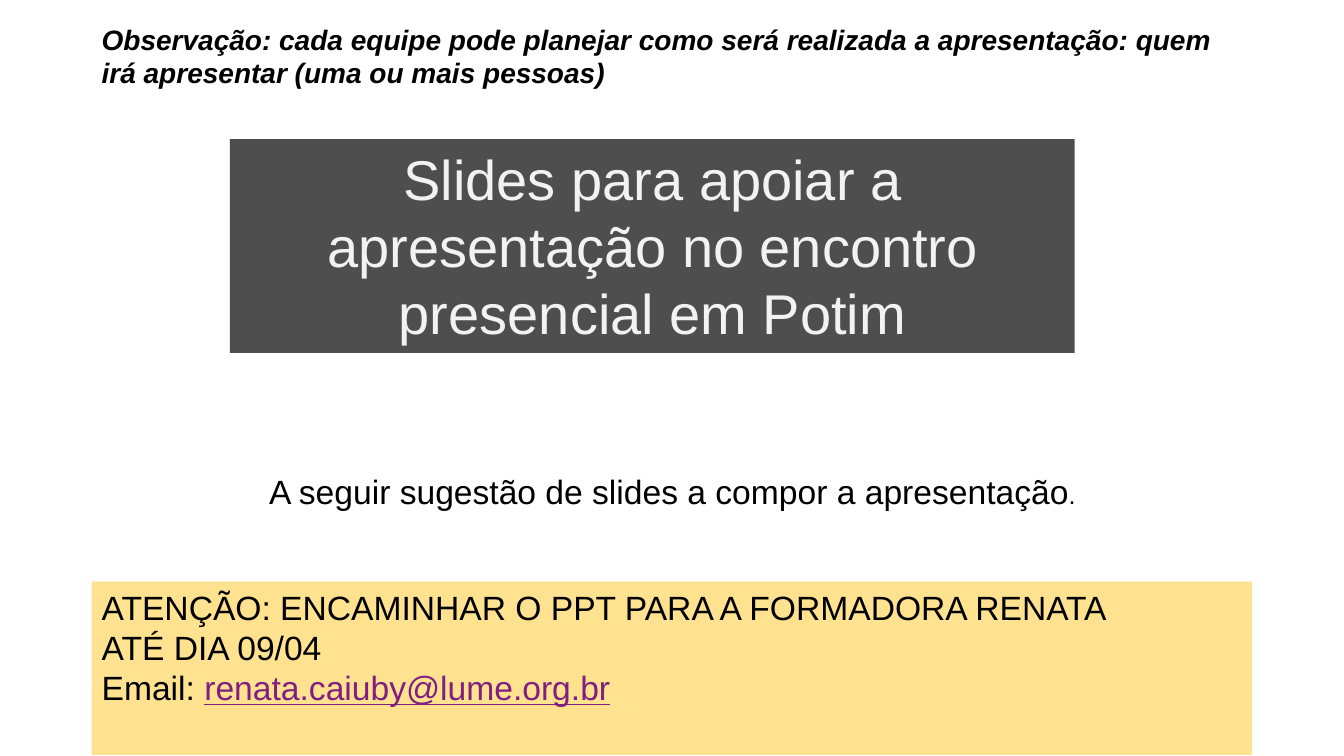
import pptx
import pptx.dml.color
import pptx.enum.shapes
import pptx.enum.text
import pptx.util

WIDTH, HEIGHT = 13.33, 7.5
ALIGN = pptx.enum.text.PP_ALIGN
BLACK = "000000"


def color(hex_value):
    """Turn a hex string into a colour."""
    return pptx.dml.color.RGBColor.from_string(hex_value)


def style(font, size, hex_value=BLACK):
    """Set the typeface, size and colour of a font."""
    font.name = "Arial"
    font.size = pptx.util.Pt(size)
    font.color.rgb = color(hex_value)


def add_area(slide, box, fill=None):
    """Add a text area, as a filled panel if a fill is given, and return its text frame."""
    left, top, width, height = (pptx.util.Inches(length) for length in box)
    if fill:
        panel = slide.shapes.add_shape(
            pptx.enum.shapes.MSO_SHAPE.RECTANGLE, left, top, width, height)
        panel.shadow.inherit = False
        panel.fill.solid()
        panel.fill.fore_color.rgb = color(fill)
        panel.line.fill.background()
    else:
        panel = slide.shapes.add_textbox(left, top, width, height)
    frame = panel.text_frame
    frame.word_wrap = True
    frame.vertical_anchor = pptx.enum.text.MSO_ANCHOR.TOP
    return frame


def write(paragraph, text, size, hex_value=BLACK, align=ALIGN.LEFT):
    """Fill a paragraph with text in one style."""
    paragraph.text = text
    paragraph.alignment = align
    style(paragraph.font, size, hex_value)


def write_mixed(paragraph, *parts):
    """Fill a paragraph with (text, size, colour) parts and return its runs."""
    paragraph.alignment = ALIGN.LEFT
    runs = []
    for text, size, hex_value in parts:
        run = paragraph.add_run()
        run.text = text
        style(run.font, size, hex_value)
        runs.append(run)
    return runs


def add_title(slide, box):
    """Add the dark title panel."""
    write(add_area(slide, box, "4D4E4D").paragraphs[0],
          "Slides para apoiar a apresentação no encontro presencial em Potim",
          40, "F2F2F2", ALIGN.CENTER)


def add_suggestion(slide, box):
    """Add the line that introduces the suggested slides."""
    write_mixed(add_area(slide, box).paragraphs[0],
                ("A seguir sugestão de slides a compor a apresentação", 24, BLACK),
                (".", 18, BLACK))


def add_deadline(slide, box):
    """Add the yellow panel with the deadline and the e-mail address."""
    frame = add_area(slide, box, "FFE28F")
    write(frame.paragraphs[0], "ATENÇÃO: ENCAMINHAR O PPT PARA A FORMADORA RENATA", 24)
    write(frame.add_paragraph(), "ATÉ DIA 09/04", 24)
    label, address = write_mixed(frame.add_paragraph(),
                                 ("Email: ", 24, BLACK),
                                 ("renata.caiuby@lume.org.br", 24, "811E82"))
    address.font.underline = True


def add_observation(slide, box):
    """Add the note to the teams at the top."""
    note = add_area(slide, box).paragraphs[0]
    write(note, "Observação: cada equipe pode planejar como será realizada a "
                "apresentação: quem irá apresentar (uma ou mais pessoas)", 20)
    note.font.bold = True
    note.font.italic = True


def main():
    """Build the slide and save it."""
    deck = pptx.Presentation()
    deck.slide_width = pptx.util.Inches(WIDTH)
    deck.slide_height = pptx.util.Inches(HEIGHT)
    slide = deck.slides.add_slide(deck.slide_layouts[6])
    margin = 0.91
    add_title(slide, (2.28, 1.38, 8.38, 2.12))
    add_suggestion(slide, (2.57, 4.62, 8.66, 0.5))
    add_deadline(slide, (margin, 5.77, WIDTH - 2 * margin, 1.72))
    add_observation(slide, (margin, 0.17, 11.36, 0.77))
    deck.save("out.pptx")


if __name__ == "__main__":
    main()
